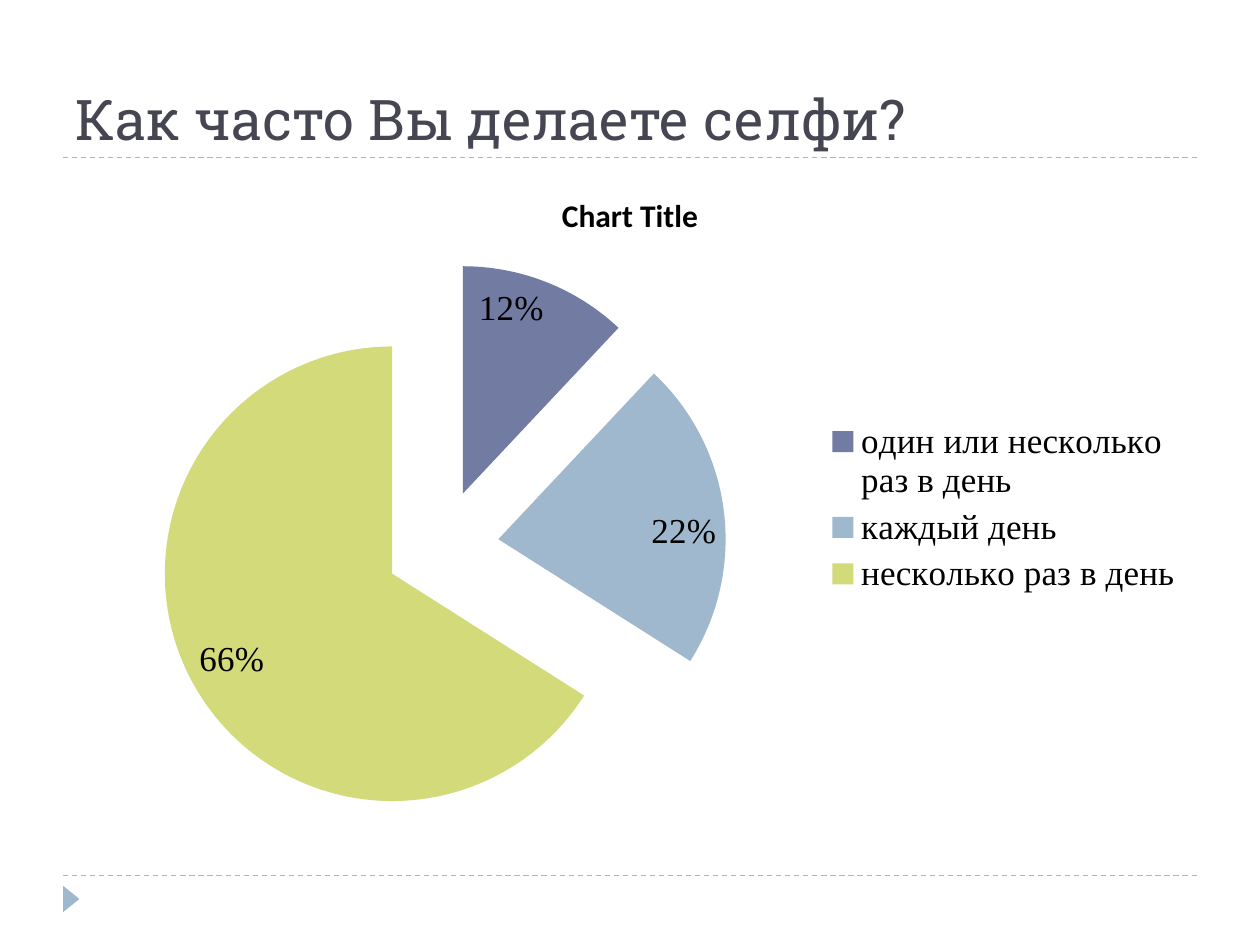
"""Build a slide with an exploded pie chart on how often people take selfies."""
import pptx
import pptx.chart.data
import pptx.dml.color
import pptx.enum.chart
import pptx.enum.dml
import pptx.enum.shapes
import pptx.enum.text
import pptx.oxml.ns
import pptx.oxml.xmlchemy
import pptx.util

HEAD = "Как часто Вы делаете селфи?"
NAME = "Chart Title"
DATA = [
    ("один или несколько раз в день", 12, "727CA3"),
    ("каждый день", 22, "9FB8CD"),
    ("несколько раз в день", 66, "D2DA7A"),
]
THEME = {
    "ink": "464653", "text": "000000", "rule": "9FB8CD",
    "head": ("Roboto Slab", 32), "name": ("Calibri", 18),
    "note": ("Times New Roman", 20),
}
WIDE, HIGH, EDGE = 10, 7.5, 0.5
SPAN = WIDE - 2 * EDGE
RULES = (6.95, 1.25)
BURST = 25


def inch(*sizes):
    return [pptx.util.Inches(size) for size in sizes]


def color(key):
    return pptx.dml.color.RGBColor.from_string(THEME.get(key, key))


def style(font, role, tint="text", bold=False):
    font.name, size = THEME[role]
    font.size = pptx.util.Pt(size)
    font.bold = bold
    font.color.rgb = color(tint)


def paint(fill, tint):
    fill.solid()
    fill.fore_color.rgb = color(tint)


def add_rule(slide, top):
    kind = pptx.enum.shapes.MSO_CONNECTOR.STRAIGHT
    rule = slide.shapes.add_connector(kind, *inch(EDGE, top, WIDE - EDGE, top))
    rule.line.color.rgb = color("rule")
    rule.line.width = pptx.util.Pt(0.75)
    rule.line.dash_style = pptx.enum.dml.MSO_LINE.DASH
    rule._element.spPr.append(pptx.oxml.xmlchemy.OxmlElement("a:effectLst"))


def add_mark(slide):
    kind = pptx.enum.shapes.MSO_SHAPE.ISOSCELES_TRIANGLE
    mark = slide.shapes.add_shape(kind, *inch(0.46, 7.07, 0.21, 0.13))
    mark.rotation = 90
    mark.shadow.inherit = False
    paint(mark.fill, "rule")
    mark.line.fill.background()


def add_head(slide):
    box = slide.shapes.add_textbox(*inch(EDGE, 0.17, SPAN, 1.08))
    frame = box.text_frame
    frame.word_wrap = True
    frame.vertical_anchor = pptx.enum.text.MSO_ANCHOR.BOTTOM
    frame.text = HEAD
    style(frame.paragraphs[0].runs[0].font, "head", "ink")


def add_pie(slide):
    names, shares, tints = zip(*DATA)
    data = pptx.chart.data.CategoryChartData()
    data.categories = names
    data.add_series("Series 1", shares)
    kind = pptx.enum.chart.XL_CHART_TYPE.PIE
    chart = slide.shapes.add_chart(kind, *inch(EDGE, 1.33, SPAN, 5.4), data).chart
    style(chart.font, "name")

    chart.has_title = True
    title = chart.chart_title.text_frame
    title.text = NAME
    style(title.paragraphs[0].runs[0].font, "name", bold=True)

    chart.has_legend = True
    chart.legend.position = pptx.enum.chart.XL_LEGEND_POSITION.RIGHT
    chart.legend.include_in_layout = False
    style(chart.legend.font, "note")

    plot = chart.plots[0]
    plot.vary_by_categories = True
    series = plot.series[0]
    for spot, tint in enumerate(tints):
        paint(series.points[spot].format.fill, tint)
    burst = pptx.oxml.xmlchemy.OxmlElement("c:explosion")
    burst.set("val", str(BURST))
    series._element.find(pptx.oxml.ns.qn("c:dPt")).addprevious(burst)

    plot.has_data_labels = True
    labels = plot.data_labels
    labels.show_value = False
    labels.show_percentage = True
    labels.number_format = "0%"
    labels.number_format_is_linked = False
    labels.position = pptx.enum.chart.XL_LABEL_POSITION.INSIDE_END
    style(labels.font, "note")


def main():
    deck = pptx.Presentation()
    deck.slide_width, deck.slide_height = inch(WIDE, HIGH)
    slide = deck.slides.add_slide(deck.slide_layouts[6])
    for top in RULES:
        add_rule(slide, top)
    add_mark(slide)
    add_head(slide)
    add_pie(slide)
    deck.save("out.pptx")


if __name__ == "__main__":
    main()
